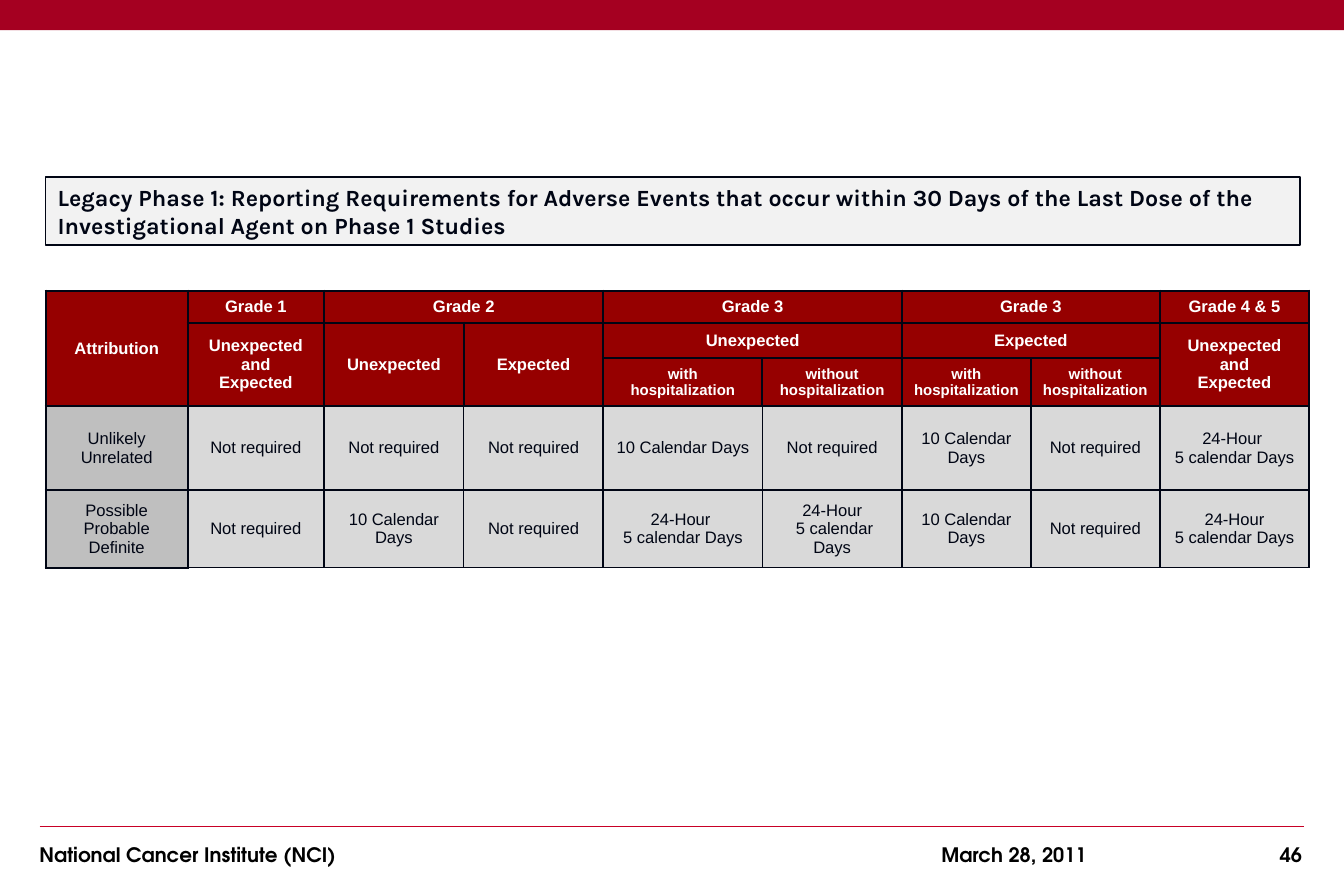
from lxml.etree import SubElement
from pptx import Presentation
from pptx.dml.color import RGBColor
from pptx.enum.shapes import MSO_CONNECTOR, MSO_SHAPE
from pptx.enum.text import MSO_ANCHOR, MSO_AUTO_SIZE, PP_ALIGN
from pptx.oxml.ns import qn
from pptx.util import Cm, Pt

TITLE = ("Legacy Phase 1: Reporting Requirements for Adverse Events that occur within "
         "30 Days of the Last Dose of the Investigational Agent on Phase 1 Studies")
FOOTERS = [
    ("National Cancer Institute (NCI)", 0.84, 10, PP_ALIGN.LEFT),
    ("March 28, 2011", 20.02, 5, PP_ALIGN.LEFT),
    ("46", 23.45, 4.24, PP_ALIGN.RIGHT),
]
BOTH = "Unexpected\nand\nExpected"
WITH, WITHOUT = "with hospitalization", "without hospitalization"
NONE, TEN = "Not required", "10 Calendar Days"
ROWS = [
    ["Attribution", "Grade 1", "Grade 2", "", "Grade 3", "", "Grade 3", "", "Grade 4 & 5"],
    ["", BOTH, "Unexpected", "Expected", "Unexpected", "", "Expected", "", BOTH],
    ["", "", "", "", WITH, WITHOUT, WITH, WITHOUT, ""],
    ["Unlikely\nUnrelated", NONE, NONE, NONE, TEN, NONE, TEN, NONE,
     "24-Hour \n5 calendar Days"],
    ["Possible\nProbable\nDefinite", NONE, TEN, NONE, "24-Hour \n5 calendar Days",
     "24-Hour\n 5 calendar Days", TEN, NONE, "24-Hour\n5 calendar Days"],
]
HEADER_ROWS = 3
MERGES = [
    ((0, 0), (2, 0)), ((0, 2), (0, 3)), ((0, 4), (0, 5)), ((0, 6), (0, 7)),
    ((1, 1), (2, 1)), ((1, 2), (2, 2)), ((1, 3), (2, 3)),
    ((1, 4), (1, 5)), ((1, 6), (1, 7)), ((1, 8), (2, 8)),
]
COLUMN_WIDTHS = [3.02, 2.9, 2.97, 2.97, 3.38, 2.97, 2.74, 2.74, 3.18]
ROW_HEIGHTS = [0.67, 0.76, 1.02, 1.78, 1.65]
THIN_RIGHT_COLUMNS = (2, 4)

INK = RGBColor(0x00, 0x05, 0x14)
BLACK = RGBColor(0x00, 0x00, 0x00)
WHITE = RGBColor(0xFF, 0xFF, 0xFF)
BAR_RED = RGBColor(0xA5, 0x00, 0x21)
RULE_RED = RGBColor(0xC8, 0x00, 0x26)
HEADER_RED = RGBColor(0x96, 0x00, 0x00)
TITLE_GRAY = RGBColor(0xF2, 0xF2, 0xF2)
LABEL_GRAY = RGBColor(0xBF, 0xBF, 0xBF)
BODY_GRAY = RGBColor(0xD9, 0xD9, 0xD9)


def write_text(frame, text, font="Arial", size=10, color=INK, bold=False, align=PP_ALIGN.CENTER):
    frame.text = text
    for paragraph in frame.paragraphs:
        paragraph.alignment = align
        for run in paragraph.runs:
            run.font.name = font
            run.font.size = Pt(size)
            run.font.bold = bold
            run.font.color.rgb = color


def set_borders(cell, left=1.5, right=1.5, top=1.5, bottom=1.5):
    properties = cell._tc.get_or_add_tcPr()
    for side, width in (("L", left), ("R", right), ("T", top), ("B", bottom)):
        line = SubElement(properties, qn(f"a:ln{side}"), w=str(Pt(width)))
        fill = SubElement(line, qn("a:solidFill"))
        SubElement(fill, qn("a:srgbClr"), val=str(INK))


def add_frame(slide):
    bar = slide.shapes.add_shape(MSO_SHAPE.RECTANGLE, 0, 0, Cm(28.58), Cm(0.64))
    bar.shadow.inherit = False
    bar.fill.solid()
    bar.fill.fore_color.rgb = BAR_RED
    bar.line.fill.background()
    rule = slide.shapes.add_connector(
        MSO_CONNECTOR.STRAIGHT, Cm(0.84), Cm(17.57), Cm(27.74), Cm(17.57))
    rule.line.color.rgb = RULE_RED
    rule.line.width = Pt(1)
    SubElement(rule._element.spPr, qn("a:effectLst"))
    for text, left, width, align in FOOTERS:
        box = slide.shapes.add_textbox(Cm(left), Cm(17.78), Cm(width), Cm(0.76))
        frame = box.text_frame
        frame.word_wrap = True
        frame.margin_left = frame.margin_right = 0
        frame.vertical_anchor = MSO_ANCHOR.MIDDLE
        write_text(frame, text, font="TeX Gyre Adventor", size=12, color=BLACK,
                   bold=True, align=align)


def add_title(slide):
    title = slide.shapes.title
    title.left, title.top, title.width, title.height = Cm(0.97), Cm(3.76), Cm(26.67), Cm(1.45)
    title.fill.solid()
    title.fill.fore_color.rgb = TITLE_GRAY
    title.line.color.rgb = INK
    title.line.width = Pt(1)
    title.text_frame.auto_size = MSO_AUTO_SIZE.NONE
    title.text_frame.vertical_anchor = MSO_ANCHOR.MIDDLE
    write_text(title.text_frame, TITLE, font="Karla", size=14, bold=True, align=PP_ALIGN.LEFT)


def format_cell(cell, row, column):
    cell.vertical_anchor = MSO_ANCHOR.MIDDLE
    if row < HEADER_ROWS:
        fill = HEADER_RED
        size = 9 if row == HEADER_ROWS - 1 else 10
        write_text(cell.text_frame, ROWS[row][column], size=size, color=WHITE, bold=True)
        set_borders(cell)
    else:
        fill = BODY_GRAY if column else LABEL_GRAY
        write_text(cell.text_frame, ROWS[row][column])
        if column:
            cell.margin_left = cell.margin_right = Cm(0.2)
            cell.margin_top = cell.margin_bottom = 0
            set_borders(cell, bottom=1,
                        left=1 if column - 1 in THIN_RIGHT_COLUMNS else 1.5,
                        right=1 if column in THIN_RIGHT_COLUMNS else 1.5,
                        top=1 if row > HEADER_ROWS else 1.5)
        else:
            set_borders(cell)
    cell.fill.solid()
    cell.fill.fore_color.rgb = fill


def add_requirements(slide):
    table = slide.shapes.add_table(
        len(ROWS), len(COLUMN_WIDTHS), Cm(0.97), Cm(6.18),
        Cm(sum(COLUMN_WIDTHS)), Cm(sum(ROW_HEIGHTS))).table
    for column, width in zip(table.columns, COLUMN_WIDTHS):
        column.width = Cm(width)
    for row, height in zip(table.rows, ROW_HEIGHTS):
        row.height = Cm(height)
    for row in range(len(ROWS)):
        for column in range(len(COLUMN_WIDTHS)):
            format_cell(table.cell(row, column), row, column)
    for first, last in MERGES:
        table.cell(*first).merge(table.cell(*last))


def main():
    presentation = Presentation()
    presentation.slide_width = Cm(28.58)
    presentation.slide_height = Cm(19.05)
    slide = presentation.slides.add_slide(presentation.slide_layouts[5])
    add_frame(slide)
    add_title(slide)
    add_requirements(slide)
    presentation.save("out.pptx")


if __name__ == "__main__":
    main()
